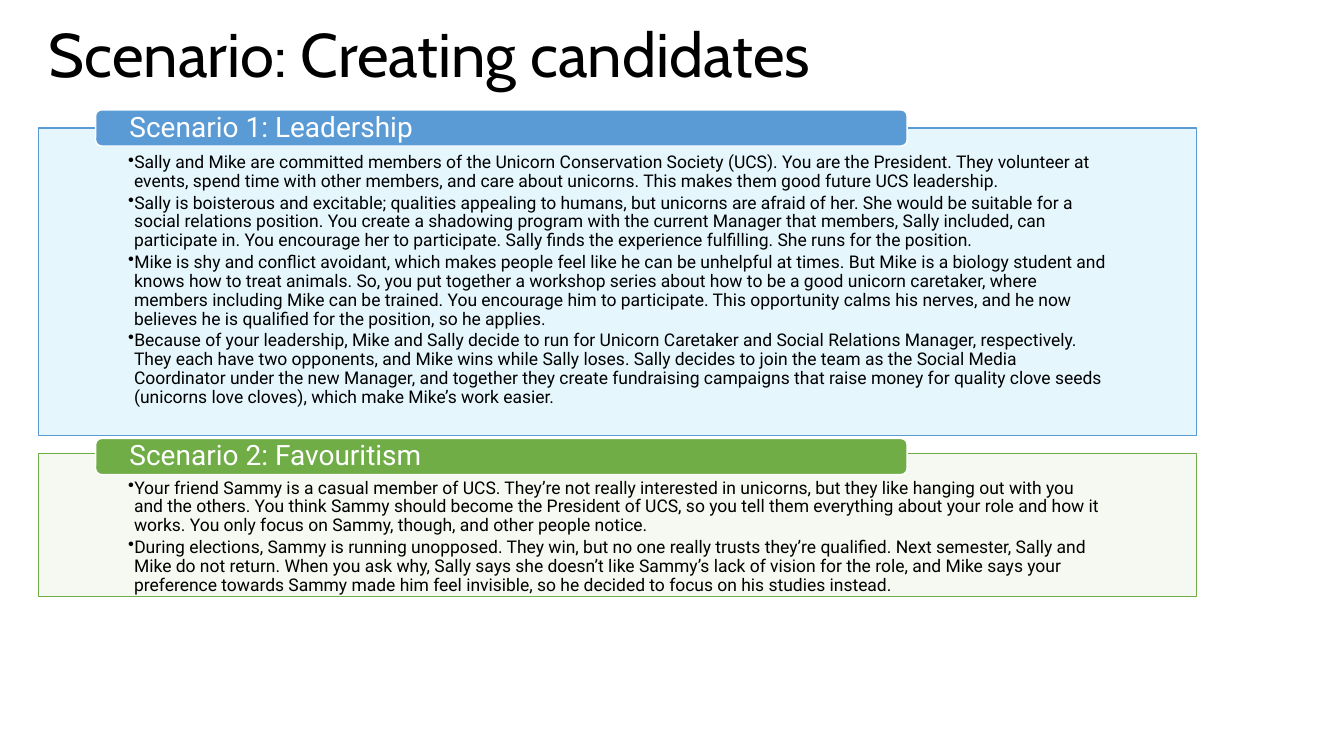
from lxml.etree import SubElement
from pptx import Presentation
from pptx.dml.color import RGBColor
from pptx.enum.shapes import MSO_SHAPE
from pptx.enum.text import MSO_ANCHOR, MSO_AUTO_SIZE, PP_ALIGN
from pptx.oxml.ns import qn
from pptx.util import Cm, Pt

COLORS = {
    "black": "000000",
    "white": "FFFFFF",
    "blue": "5B9BD5",
    "pale blue": "69CEF6",
    "green": "70AD47",
    "pale green": "C5E0B4",
}

# Panel and heading places in cm: top, height, heading top
SCENARIOS = [
    {
        "heading": "Scenario 1: Leadership",
        "color": "blue", "tint": "pale blue",
        "top": 3.23, "height": 7.75, "heading_top": 2.77,
        "points": [
            "Sally and Mike are committed members of the Unicorn Conservation Society (UCS). "
            "You are the President. They volunteer at events, spend time with other members, "
            "and care about unicorns. This makes them good future UCS leadership.",
            "Sally is boisterous and excitable; qualities appealing to humans, but unicorns are "
            "afraid of her. She would be suitable for a social relations position. You create a "
            "shadowing program with the current Manager that members, Sally included, can "
            "participate in. You encourage her to participate. Sally finds the experience "
            "fulfilling. She runs for the position.",
            "Mike is shy and conflict avoidant, which makes people feel like he can be unhelpful "
            "at times. But Mike is a biology student and knows how to treat animals. So, you put "
            "together a workshop series about how to be a good unicorn caretaker, where members "
            "including Mike can be trained. You encourage him to participate. This opportunity "
            "calms his nerves, and he now believes he is qualified for the position, so he applies.",
            "Because of your leadership, Mike and Sally decide to run for Unicorn Caretaker and "
            "Social Relations Manager, respectively. They each have two opponents, and Mike wins "
            "while Sally loses. Sally decides to join the team as the Social Media Coordinator "
            "under the new Manager, and together they create fundraising campaigns that raise "
            "money for quality clove seeds (unicorns love cloves), which make Mike’s work easier.",
        ],
    },
    {
        "heading": "Scenario 2: Favouritism",
        "color": "green", "tint": "pale green",
        "top": 11.43, "height": 3.61, "heading_top": 11.05,
        "points": [
            "Your friend Sammy is a casual member of UCS. They’re not really interested in "
            "unicorns, but they like hanging out with you and the others. You think Sammy should "
            "become the President of UCS, so you tell them everything about your role and how it "
            "works. You only focus on Sammy, though, and other people notice.",
            "During elections, Sammy is running unopposed. They win, but no one really trusts "
            "they’re qualified. Next semester, Sally and Mike do not return. When you ask why, "
            "Sally says she doesn’t like Sammy’s lack of vision for the role, and Mike says your "
            "preference towards Sammy made him feel invisible, so he decided to focus on his "
            "studies instead.",
        ],
    },
]


class SlideBuilder:
    title_font = "Cabin"
    body_font = "Roboto"

    def __init__(self, slide):
        self.slide = slide

    def color(self, name):
        return RGBColor.from_string(COLORS[name])

    def add_text(self, paragraph, text, font, size, color):
        paragraph.alignment = PP_ALIGN.LEFT
        paragraph.line_spacing = 0.9
        run = paragraph.add_run()
        run.text = text
        run.font.name = font
        run.font.size = Pt(size)
        run.font.color.rgb = self.color(color)

    def title(self, text):
        title = self.slide.shapes.title
        title.left, title.top, title.width, title.height = Cm(0.97), Cm(0), Cm(27.69), Cm(2.9)
        frame = title.text_frame
        frame.auto_size = MSO_AUTO_SIZE.NONE
        frame.vertical_anchor = MSO_ANCHOR.MIDDLE
        self.add_text(frame.paragraphs[0], text, self.title_font, 44, "black")

    def box(self, kind, place, fill, line, insets, anchor):
        box = self.slide.shapes.add_shape(kind, *(Cm(length) for length in place))
        box.shadow.inherit = False
        box.fill.solid()
        box.fill.fore_color.rgb = self.color(fill)
        box.line.color.rgb = self.color(line)
        box.line.width = Pt(1)
        frame = box.text_frame
        frame.word_wrap = True
        frame.vertical_anchor = anchor
        side, top, bottom = insets
        frame.margin_left = frame.margin_right = Cm(side)
        frame.margin_top, frame.margin_bottom = Cm(top), Cm(bottom)
        return box

    def panel(self, top, height, tint, line, points):
        panel = self.box(MSO_SHAPE.RECTANGLE, (0.97, top, 29.18, height), tint, line,
                         (2.26, 0.64, 0.23), MSO_ANCHOR.TOP)
        # Translucent tint
        tint_color = panel._element.spPr.find(qn("a:solidFill"))[0]
        SubElement(tint_color, qn("a:alpha"), val="17000")
        # Bulleted points
        frame = panel.text_frame
        for index, point in enumerate(points):
            paragraph = frame.add_paragraph() if index else frame.paragraphs[0]
            properties = paragraph._p.get_or_add_pPr()
            properties.set("marL", str(Cm(0.15)))
            properties.set("indent", str(-Cm(0.15)))
            SubElement(properties, qn("a:buChar"), char="•")
            paragraph.level = 1
            paragraph.space_after = Pt(1.9)
            self.add_text(paragraph, point, self.body_font, 12.5, "black")

    def heading(self, top, text, color):
        heading = self.box(MSO_SHAPE.ROUNDED_RECTANGLE, (2.41, top, 20.45, 0.91), color, "white",
                           (0.81, 0.05, 0.05), MSO_ANCHOR.MIDDLE)
        self.add_text(heading.text_frame.paragraphs[0], text, self.body_font, 20, "white")


def main():
    deck = Presentation()
    deck.slide_width, deck.slide_height = Cm(33.87), Cm(19.05)
    builder = SlideBuilder(deck.slides.add_slide(deck.slide_layouts[5]))

    builder.title("Scenario: Creating candidates")

    # Each scenario: a panel with its heading over the top edge
    for scenario in SCENARIOS:
        builder.panel(scenario["top"], scenario["height"], scenario["tint"],
                      scenario["color"], scenario["points"])
        builder.heading(scenario["heading_top"], scenario["heading"], scenario["color"])

    deck.save("out.pptx")


if __name__ == "__main__":
    main()
